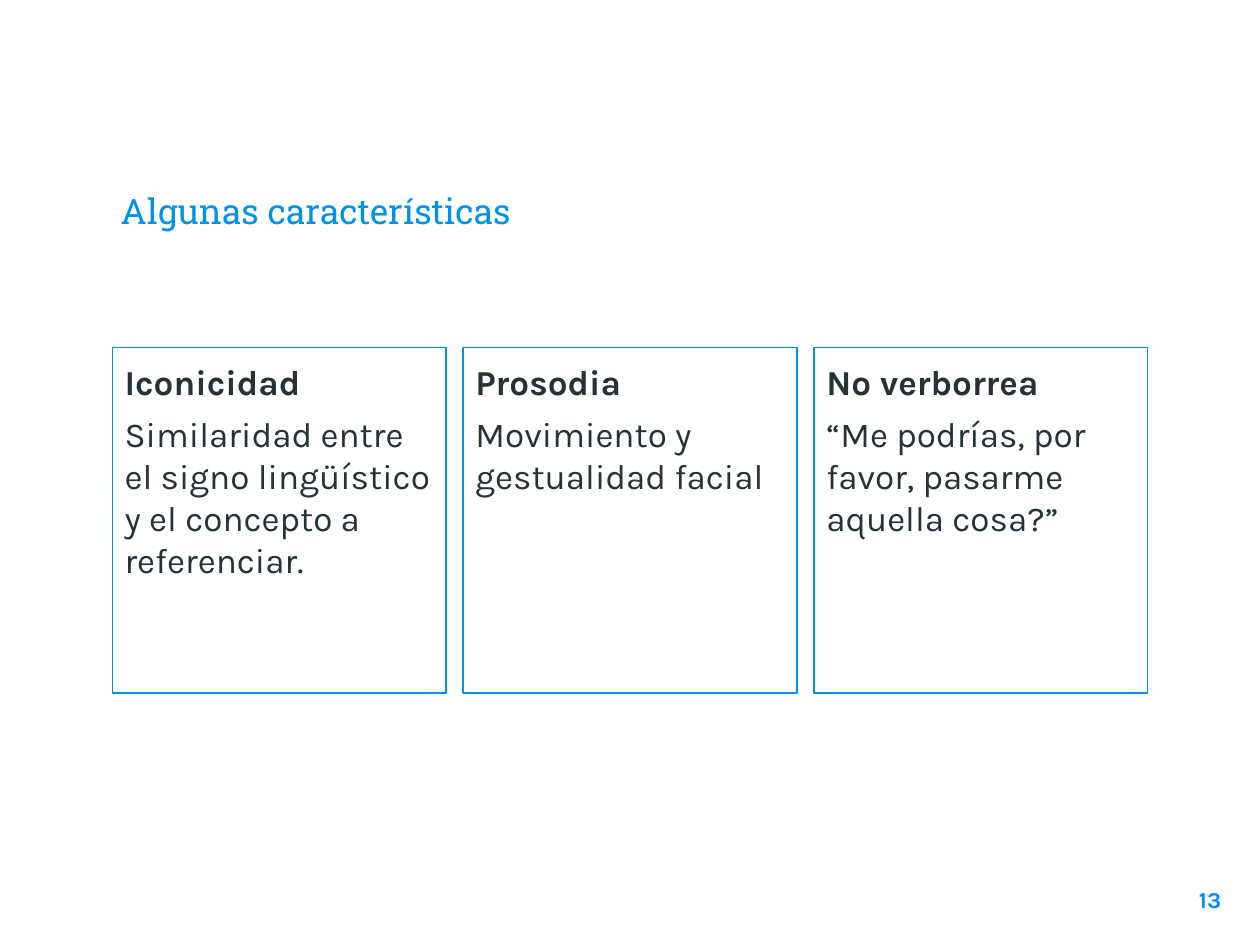
from pptx import Presentation
from pptx.dml.color import RGBColor
from pptx.enum.shapes import MSO_SHAPE
from pptx.enum.text import MSO_ANCHOR, PP_ALIGN
from pptx.util import Inches, Pt

BLUE = RGBColor(0x00, 0x91, 0xEA)
DARK = RGBColor(0x26, 0x32, 0x38)

TITLE = {"name": "Roboto Slab", "size": Pt(20), "bold": False}
HEAD = {"name": "Karla", "size": Pt(20), "bold": True}
BODY = {"name": "Karla", "size": Pt(20), "bold": False}
NUMBER = {"name": "Karla", "size": Pt(13), "bold": True}

# Row of equal cards, spread between the left and right edges
LEFT, RIGHT, TOP = 0.89, 9.11, 2.76
WIDTH, HEIGHT = 2.65, 2.74
CARDS = [
    ("Iconicidad",
     "Similaridad entre el signo lingüístico y el concepto a referenciar."),
    ("Prosodia", "Movimiento y gestualidad facial"),
    ("No verborrea", "“Me podrías, por favor, pasarme aquella cosa?”"),
]


def set_frame(frame, anchor=MSO_ANCHOR.TOP):
    frame.word_wrap = True
    frame.vertical_anchor = anchor
    for side in ("left", "right", "top", "bottom"):
        setattr(frame, f"margin_{side}", Inches(0.1))


def set_text(para, text, style, color, align=PP_ALIGN.LEFT):
    para.alignment = align
    run = para.add_run()
    run.text = text
    for key, value in style.items():
        setattr(run.font, key, value)
    run.font.color.rgb = color


def add_label(slide, box, text, style, anchor=MSO_ANCHOR.TOP,
              align=PP_ALIGN.LEFT):
    frame = slide.shapes.add_textbox(*map(Inches, box)).text_frame
    set_frame(frame, anchor)
    set_text(frame.paragraphs[0], text, style, BLUE, align)


def add_card(slide, left, head, body):
    box = map(Inches, (left, TOP, WIDTH, HEIGHT))
    card = slide.shapes.add_shape(MSO_SHAPE.RECTANGLE, *box)
    card.shadow.inherit = False
    card.fill.background()
    card.line.color.rgb = BLUE
    card.line.width = Pt(0.75)
    frame = card.text_frame
    set_frame(frame)
    set_text(frame.paragraphs[0], head, HEAD, DARK)
    para = frame.add_paragraph()
    para.space_before = Pt(6)
    set_text(para, body, BODY, DARK)


def main():
    prs = Presentation()
    prs.slide_width, prs.slide_height = Inches(10), Inches(7.5)
    slide = prs.slides.add_slide(prs.slide_layouts[6])

    # Title
    add_label(slide, (0.86, 0.92, 8.28, 1.02), "Algunas características",
              TITLE, anchor=MSO_ANCHOR.BOTTOM)

    # Cards
    step = (RIGHT - LEFT - WIDTH) / (len(CARDS) - 1)
    for i, (head, body) in enumerate(CARDS):
        add_card(slide, LEFT + i * step, head, body)

    # Slide number
    add_label(slide, (9.19, 6.93, 0.6, 0.57), "13", NUMBER,
              align=PP_ALIGN.RIGHT)

    prs.save("out.pptx")


if __name__ == "__main__":
    main()
